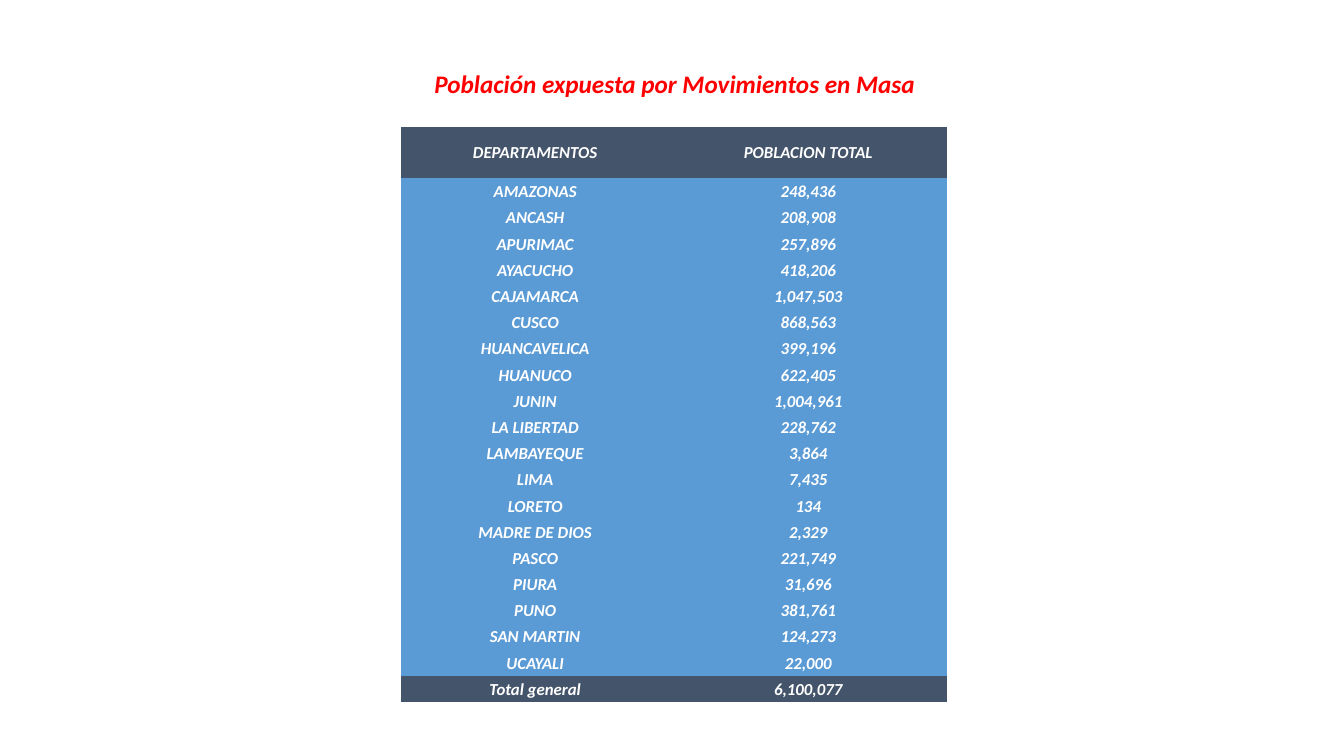
from dataclasses import dataclass

from pptx import Presentation
from pptx.dml.color import RGBColor
from pptx.enum.text import MSO_ANCHOR, MSO_AUTO_SIZE, PP_ALIGN
from pptx.oxml.ns import qn
from pptx.slide import Slide
from pptx.table import Table, _Cell
from pptx.text.text import TextFrame
from pptx.util import Emu, Pt


@dataclass(frozen=True)
class Theme:
    font: str = "Calibri"
    red: str = "FF0000"
    white: str = "FFFFFF"
    dark: str = "44546A"
    blue: str = "5B9BD5"
    title: int = 18
    body: int = 12


@dataclass(frozen=True)
class Row:
    name: str
    total: str
    fill: str
    height: int = 52


THEME = Theme()
SCALE = 4572
PLAIN = "{2D5ABB26-0587-4C30-8999-92F81FD0307C}"
REGIONS = (
    ("AMAZONAS", "248,436"),
    ("ANCASH", "208,908"),
    ("APURIMAC", "257,896"),
    ("AYACUCHO", "418,206"),
    ("CAJAMARCA", "1,047,503"),
    ("CUSCO", "868,563"),
    ("HUANCAVELICA", "399,196"),
    ("HUANUCO", "622,405"),
    ("JUNIN", "1,004,961"),
    ("LA LIBERTAD", "228,762"),
    ("LAMBAYEQUE", "3,864"),
    ("LIMA", "7,435"),
    ("LORETO", "134"),
    ("MADRE DE DIOS", "2,329"),
    ("PASCO", "221,749"),
    ("PIURA", "31,696"),
    ("PUNO", "381,761"),
    ("SAN MARTIN", "124,273"),
    ("UCAYALI", "22,000"),
)
ROWS = [
    Row("DEPARTAMENTOS", "POBLACION TOTAL", THEME.dark, 102),
    *(Row(name, total, THEME.blue) for name, total in REGIONS),
    Row("Total general", "6,100,077", THEME.dark),
]
WIDTHS = (532, 552)


def px(count: int) -> Emu:
    return Emu(count * SCALE)


def write(frame: TextFrame, text: str, *, size: int, color: str) -> None:
    line = frame.paragraphs[0]
    line.alignment = PP_ALIGN.CENTER
    run = line.add_run()
    run.text = text
    font = run.font
    font.name = THEME.font
    font.size = Pt(size)
    font.bold = font.italic = True
    font.color.rgb = RGBColor.from_string(color)


def add_title(slide: Slide, text: str) -> None:
    box = slide.shapes.add_textbox(px(836), px(126), px(1006), px(80))
    frame = box.text_frame
    frame.word_wrap = False
    frame.auto_size = MSO_AUTO_SIZE.SHAPE_TO_FIT_TEXT
    write(frame, text, size=THEME.title, color=THEME.red)


def fill_cell(cell: _Cell, text: str, fill: str) -> None:
    cell.margin_left = cell.margin_right = cell.margin_top = px(2)
    cell.margin_bottom = px(0)
    cell.vertical_anchor = MSO_ANCHOR.MIDDLE
    cell.fill.solid()
    cell.fill.fore_color.rgb = RGBColor.from_string(fill)
    write(cell.text_frame, text, size=THEME.body, color=THEME.white)


def add_grid(slide: Slide, rows: list[Row]) -> Table:
    height = sum(row.height for row in rows)
    shape = slide.shapes.add_table(
        len(rows), len(WIDTHS), px(796), px(252), px(sum(WIDTHS)), px(height)
    )
    table = shape.table
    table.first_row = table.horz_banding = False
    table._tbl.tblPr.find(qn("a:tableStyleId")).text = PLAIN
    for column, width in zip(table.columns, WIDTHS):
        column.width = px(width)
    for line, row in zip(table.rows, rows):
        line.height = px(row.height)
        for cell, text in zip(line.cells, (row.name, row.total)):
            fill_cell(cell, text, row.fill)
    return table


def main() -> None:
    deck = Presentation()
    deck.slide_width, deck.slide_height = px(2667), px(1500)
    slide = deck.slides.add_slide(deck.slide_layouts[6])
    add_title(slide, "Población expuesta por Movimientos en Masa")
    add_grid(slide, ROWS)
    deck.save("out.pptx")


if __name__ == "__main__":
    main()
